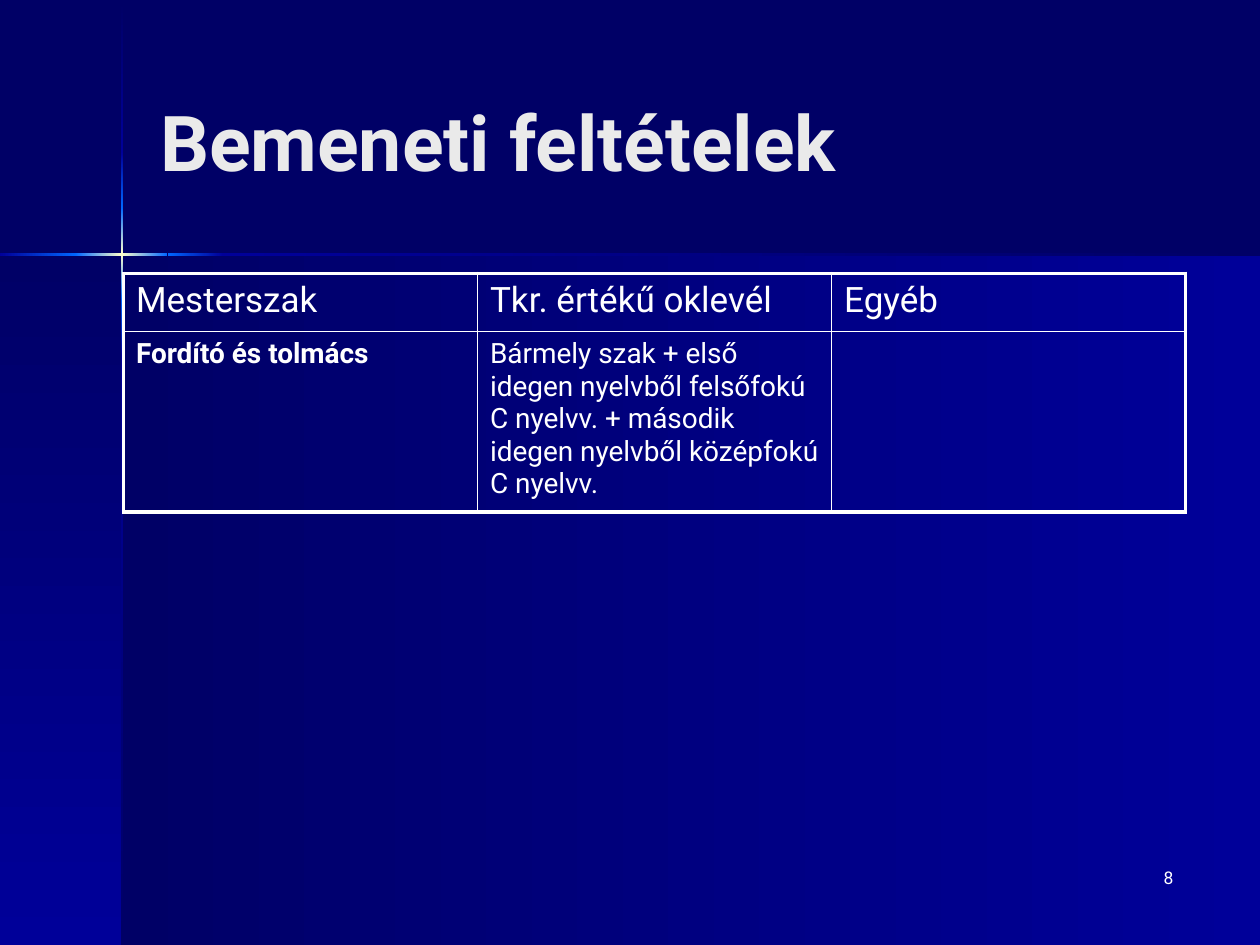
from copy import deepcopy
from dataclasses import dataclass

from lxml import etree
from pptx import Presentation
from pptx.dml.color import RGBColor
from pptx.enum.shapes import MSO_SHAPE
from pptx.enum.text import MSO_ANCHOR, PP_ALIGN
from pptx.oxml.ns import qn
from pptx.util import Inches, Pt

RECTANGLE = MSO_SHAPE.RECTANGLE
MIDDLE, TOP = MSO_ANCHOR.MIDDLE, MSO_ANCHOR.TOP
LEFT, RIGHT = PP_ALIGN.LEFT, PP_ALIGN.RIGHT

NAVY = RGBColor(0x00, 0x00, 0x66)
BLUE = RGBColor(0x00, 0x00, 0x99)
BRIGHT = RGBColor(0x00, 0x66, 0xFF)
GLOW = RGBColor(0xFF, 0xFF, 0xCC)
WHITE = RGBColor(0xFF, 0xFF, 0xFF)
PALE = RGBColor(0xEA, 0xEA, 0xEA)

FONT = "Roboto"
BEAM = 0.02
BEAM_X, BEAM_Y = 0.96, 2.01
OUTER, INNER = 2.25, 1


@dataclass(frozen=True)
class Band:
    left: float
    top: float
    width: float
    height: float
    colors: tuple[RGBColor, ...]
    downward: bool = False


@dataclass(frozen=True)
class Entry:
    text: str
    size: float = 16
    bold: bool = False


def beam_down(top: float, height: float, *colors: RGBColor) -> Band:
    return Band(BEAM_X, top, BEAM, height, colors, True)


def beam_across(left: float, width: float, *colors: RGBColor) -> Band:
    return Band(left, BEAM_Y, width, BEAM, colors)


BANDS = (
    Band(0.97, 2.02, 9.03, 5.48, (NAVY, BLUE)),
    Band(0, 2.02, 0.97, 5.48, (NAVY, BLUE), True),
    beam_down(0.01, 1.2, NAVY, BLUE),
    beam_down(2.82, 4.68, BLUE, NAVY),
    beam_across(1.77, 8.23, BLUE, NAVY),
    beam_down(2.38, 0.44, BRIGHT, BLUE),
    beam_down(1.21, 0.44, BLUE, BRIGHT),
    beam_down(1.65, 0.73, BRIGHT, GLOW, BRIGHT),
    beam_across(0, 0.61, BLUE, BRIGHT),
    beam_across(1.33, 0.44, BRIGHT, BLUE),
    beam_across(0.6, 0.73, BRIGHT, GLOW, BRIGHT),
)

REQUIREMENTS = (
    (Entry("Mesterszak", 20), Entry("Tkr. értékű oklevél", 20), Entry("Egyéb", 20)),
    (
        Entry("Fordító és tolmács", bold=True),
        Entry(
            "Bármely szak + első idegen nyelvből felsőfokú C nyelvv. + "
            "második idegen nyelvből középfokú C nyelvv."
        ),
        Entry(""),
    ),
)
ROW_HEIGHTS = (0.46, 1.4)
COLUMN_WIDTH = 2.81


def write(frame, text: str, *, size: float, color: RGBColor = WHITE,
          bold: bool = False, align=LEFT, anchor=TOP) -> None:
    frame.word_wrap = True
    frame.vertical_anchor = anchor
    paragraph = frame.paragraphs[0]
    paragraph.alignment = align
    if not text:
        paragraph.font.size = Pt(size)
        return
    run = paragraph.add_run()
    run.text = text
    run.font.name = FONT
    run.font.size = Pt(size)
    run.font.bold = bold
    run.font.color.rgb = color


def draw_band(shapes, band: Band) -> None:
    box = (Inches(v) for v in (band.left, band.top, band.width, band.height))
    strip = shapes.add_shape(RECTANGLE, *box)
    strip.shadow.inherit = False
    strip.line.fill.background()
    strip.fill.gradient()
    strip.fill.gradient_angle = 270 if band.downward else 0
    stop_list = next(strip.element.spPr.iter(qn("a:gsLst")))
    for _ in band.colors[2:]:
        stop_list.append(deepcopy(stop_list[-1]))
    last = len(band.colors) - 1
    for index, (stop, color) in enumerate(zip(strip.fill.gradient_stops, band.colors)):
        stop.position = index / last
        stop.color.rgb = color


def draw_borders(cell, **widths: float) -> None:
    properties = cell._tc.get_or_add_tcPr()
    for index, (side, width) in enumerate(widths.items()):
        line = etree.Element(qn(f"a:ln{side}"), w=str(Pt(width)))
        fill = etree.SubElement(line, qn("a:solidFill"))
        etree.SubElement(fill, qn("a:srgbClr"), val=str(WHITE))
        properties.insert(index, line)


def draw_table(shapes, rows: tuple[tuple[Entry, ...], ...]) -> None:
    last_row, last_column = len(rows) - 1, len(rows[0]) - 1
    table = shapes.add_table(
        len(rows), len(rows[0]), Inches(0.98), Inches(2.17),
        Inches(COLUMN_WIDTH * len(rows[0])), Inches(sum(ROW_HEIGHTS)),
    ).table
    table.first_row = table.horz_banding = False
    for column in table.columns:
        column.width = Inches(COLUMN_WIDTH)
    for r, (entries, height) in enumerate(zip(rows, ROW_HEIGHTS)):
        table.rows[r].height = Inches(height)
        for c, entry in enumerate(entries):
            cell = table.cell(r, c)
            cell.fill.background()
            write(cell.text_frame, entry.text, size=entry.size, bold=entry.bold)
            draw_borders(
                cell,
                L=OUTER if c == 0 else INNER,
                R=OUTER if c == last_column else INNER,
                T=OUTER if r == 0 else INNER,
                B=OUTER if r == last_row else INNER,
            )


def main() -> None:
    presentation = Presentation()
    presentation.slide_width, presentation.slide_height = Inches(10), Inches(7.5)
    slide = presentation.slides.add_slide(presentation.slide_layouts[5])
    slide.background.fill.solid()
    slide.background.fill.fore_color.rgb = NAVY

    for band in BANDS:
        draw_band(slide.shapes, band)

    page_number = slide.shapes.add_textbox(
        Inches(7.33), Inches(6.83), Inches(2.08), Inches(0.5))
    write(page_number.text_frame, "8", size=10, align=RIGHT)

    title = slide.shapes.title
    title.left, title.top = Inches(1.17), Inches(0.33)
    title.width, title.height = Inches(8.25), Inches(1.57)
    write(title.text_frame, "Bemeneti feltételek", size=44, color=PALE,
          bold=True, anchor=MIDDLE)

    draw_table(slide.shapes, REQUIREMENTS)
    presentation.save("out.pptx")


if __name__ == "__main__":
    main()
